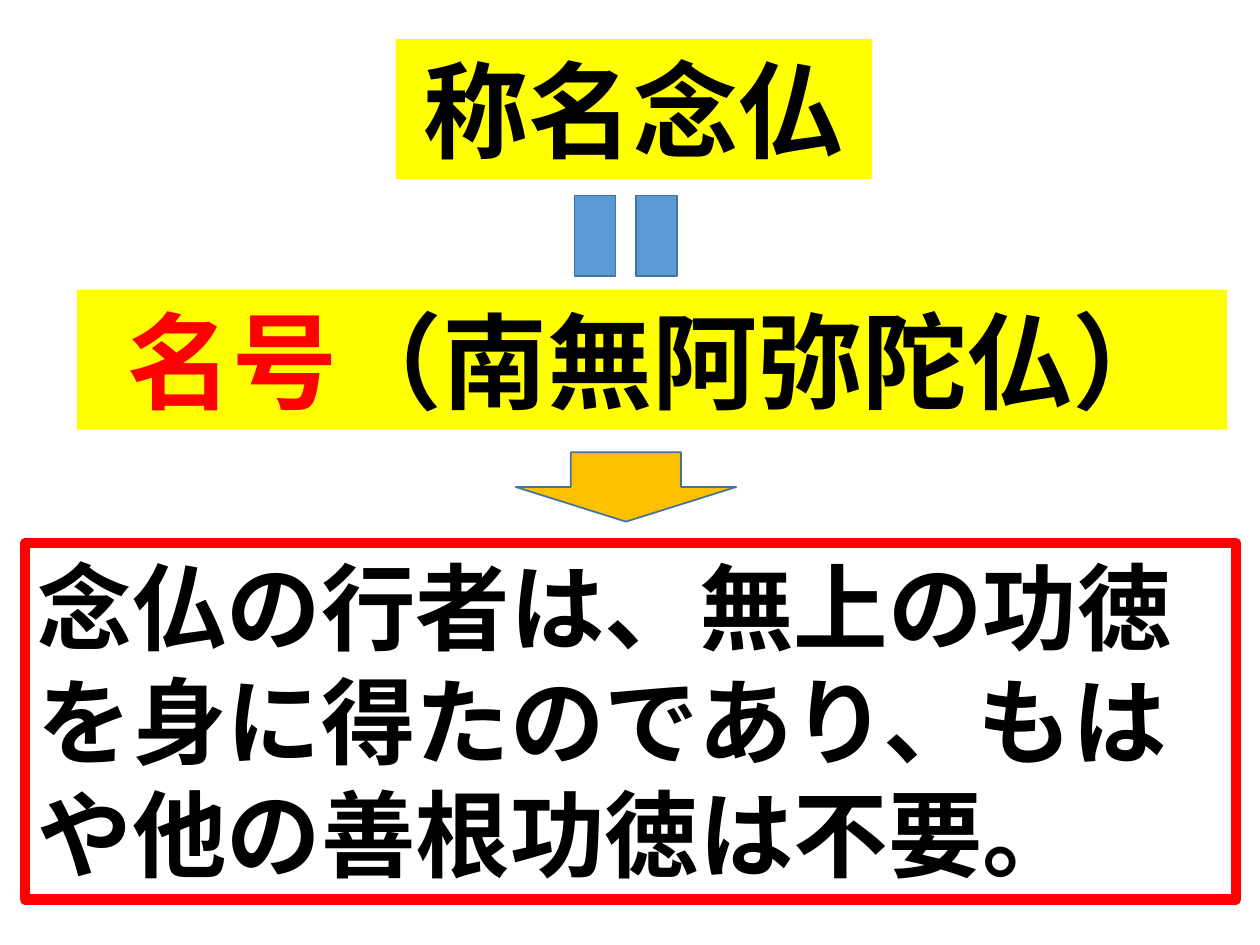
"""Build a slide on nembutsu, the Name and its supreme merit."""
from pptx import Presentation
from pptx.dml.color import RGBColor
from pptx.enum import shapes, text
from pptx.util import Pt

BLACK = RGBColor(0x00, 0x00, 0x00)
RED = RGBColor(0xFF, 0x00, 0x00)
YELLOW = RGBColor(0xFF, 0xFF, 0x00)
BLUE = RGBColor(0x5B, 0x9B, 0xD5)
EDGE = RGBColor(0x43, 0x73, 0x9E)
ORANGE = RGBColor(0xFF, 0xC0, 0x00)

prs = Presentation()
prs.slide_width, prs.slide_height = Pt(720), Pt(540)
s = prs.slides.add_slide(prs.slide_layouts[6])


def add_text(box, size, align, runs):
    sp = s.shapes.add_textbox(*map(Pt, box))
    tf = sp.text_frame
    tf.word_wrap = True
    tf.auto_size = text.MSO_AUTO_SIZE.SHAPE_TO_FIT_TEXT
    p = tf.paragraphs[0]
    p.alignment = align
    for words, color in runs:
        r = p.add_run()
        r.text = words
        r.font.name = "Calibri"
        r.font.size = Pt(size)
        r.font.bold = True
        r.font.color.rgb = color
    return sp


def add_symbol(kind, box, color):
    sp = s.shapes.add_shape(kind, *map(Pt, box))
    sp.shadow.inherit = False
    sp.fill.solid()
    sp.fill.fore_color.rgb = color
    sp.line.color.rgb = EDGE
    sp.line.width = Pt(1)
    return sp


conclusion = add_text(
    (14.4, 310.3, 691.9, 203.8), 54, text.PP_ALIGN.LEFT,
    [("念仏の行者は、無上の功徳を身に得たのであり、もはや他の善根功徳は不要。", BLACK)])
conclusion.line.color.rgb = RED
conclusion.line.width = Pt(6)

for box, runs in [
    ((226.1, 22.3, 272.2, 79.9), [("称名念仏", BLACK)]),
    ((43.9, 165.6, 657.4, 79.9), [("名号", RED), ("（南無阿弥陀仏）", BLACK)]),
]:
    banner = add_text(box, 60, text.PP_ALIGN.CENTER, runs)
    banner.fill.solid()
    banner.fill.fore_color.rgb = YELLOW

equal = add_symbol(shapes.MSO_SHAPE.MATH_EQUAL, (326.2, 85, 62.6, 99.4), BLUE)
equal.rotation = 90
add_symbol(shapes.MSO_SHAPE.DOWN_ARROW, (294.7, 258.5, 126, 39.6), ORANGE)

prs.save("out.pptx")
